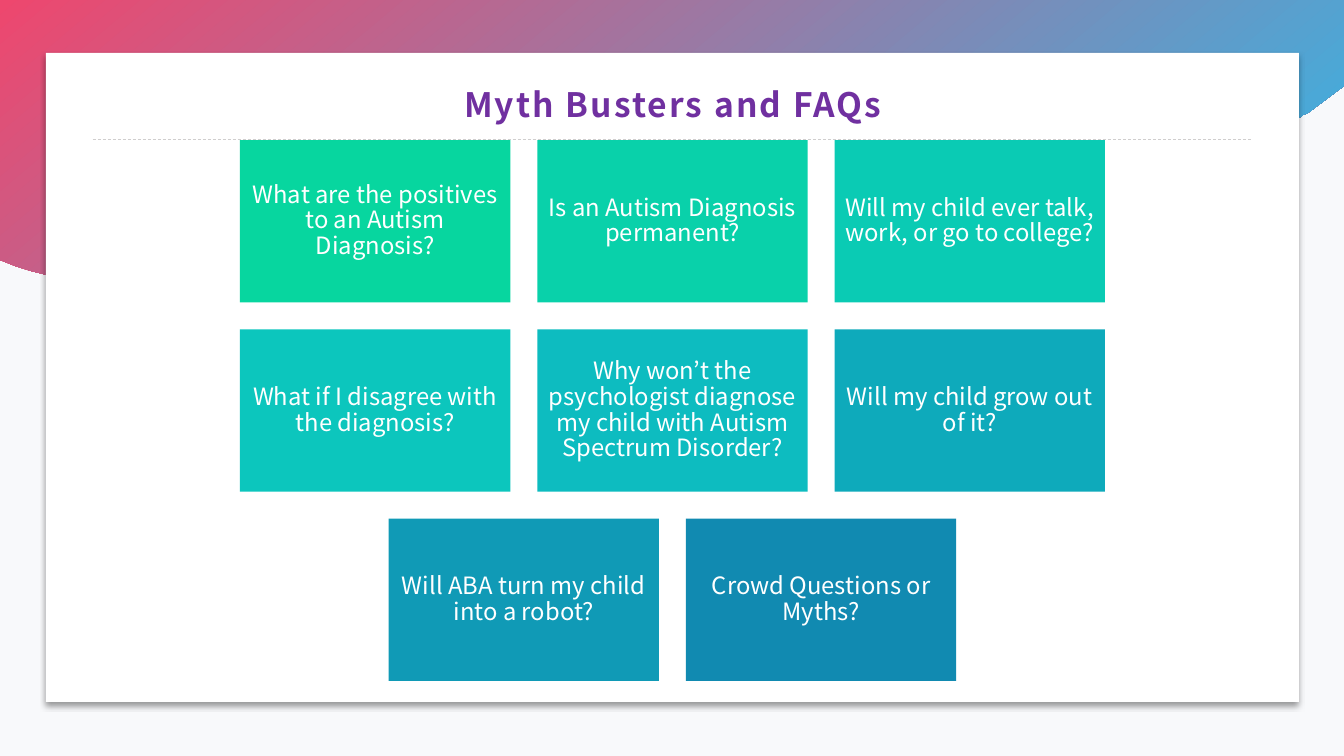
import pptx
import pptx.dml.color
import pptx.enum.dml
import pptx.enum.shapes
import pptx.enum.text
import pptx.oxml
import pptx.oxml.ns
import pptx.util

PX = 914400 / 100.8


class Theme:
    """Colours, font and type sizes of the slide."""
    font = "Noto Sans CJK JP"
    title_size, tile_size = 24, 17
    background, card, rule = "F8F9FB", "FFFFFF", "D0CECE"
    wave = ("EE476E", "2DBAEA")
    title, tile_text = "7030A0", "FFFFFF"


QUESTION_ROWS = [
    [("What are the positives to an Autism Diagnosis?", "07D69F"),
     ("Is an Autism Diagnosis permanent?", "09D1AA"),
     ("Will my child ever talk, work, or go to college?", "0ACBB4")],
    [("What if I disagree with the diagnosis?", "0CC6BD"),
     ("Why won’t the psychologist diagnose my child with Autism Spectrum Disorder?", "0DBCC0"),
     ("Will my child grow out of it?", "0EAABB")],
    [("Will ABA turn my child into a robot?", "109AB6"),
     ("Crowd Questions or Myths?", "118AB1")],
]


def px(n):
    """Turn pixels into EMU."""
    return pptx.util.Emu(round(n * PX))


def rgb(code):
    """Turn a hex code into a colour."""
    return pptx.dml.color.RGBColor.from_string(code)


def write_text(sp, text, size, color, bold=False):
    """Set one centred paragraph in a shape and return its run."""
    tf = sp.text_frame
    tf.text = text
    tf.word_wrap = True
    tf.auto_size = pptx.enum.text.MSO_AUTO_SIZE.NONE
    tf.vertical_anchor = pptx.enum.text.MSO_ANCHOR.MIDDLE
    p = tf.paragraphs[0]
    p.alignment = pptx.enum.text.PP_ALIGN.CENTER
    p.line_spacing = 0.9
    r = p.runs[0]
    r.font.name, r.font.size, r.font.bold = Theme.font, pptx.util.Pt(size), bold
    r.font.color.rgb = rgb(color)
    return r


def add_box(slide, box, color):
    """Add a plain filled rectangle."""
    sp = slide.shapes.add_shape(pptx.enum.shapes.MSO_SHAPE.RECTANGLE, *map(px, box))
    sp.shadow.inherit = False
    sp.fill.solid()
    sp.fill.fore_color.rgb = rgb(color)
    sp.line.fill.background()
    return sp


def curve(points, steps=24):
    """Sample a cubic curve given by its four control points."""
    for i in range(1, steps + 1):
        t = i / steps
        weights = ((1 - t) ** 3, 3 * t * (1 - t) ** 2, 3 * t * t * (1 - t), t ** 3)
        yield tuple(round(sum(w * pt[k] for w, pt in zip(weights, points)), 2) for k in (0, 1))


def add_wave(slide, left, top, width):
    """Draw the gradient wave along the top edge."""
    edge = [(0, 260), (123, 306), (268, 313), (396, 276), (534, 237), (653, 152), (798, 137),
            (944, 122), (1097, 181), (1237, 143), (1277, 132), (1314, 112), (width, 86)]
    outline = [edge[0]]
    for i in range(0, len(edge) - 1, 3):
        outline += curve(edge[i:i + 4])
    builder = slide.shapes.build_freeform(0, 0, scale=PX)
    builder.add_line_segments(outline + [(width, 0)], close=True)
    sp = builder.convert_to_shape(px(left), px(top))
    sp.shadow.inherit = False
    sp.line.fill.background()
    sp.fill.gradient()
    sp.fill.gradient_angle = 310
    for stop, color, position in zip(sp.fill.gradient_stops, Theme.wave, (0, 1)):
        stop.color.rgb = rgb(color)
        stop.position = position


def add_card(slide, box):
    """Draw the white card with its soft shadow."""
    sp = add_box(slide, box, Theme.card)
    effects = sp._element.spPr.find(pptx.oxml.ns.qn("a:effectLst"))
    effects.append(pptx.oxml.parse_xml(
        f'<a:outerShdw {pptx.oxml.ns.nsdecls("a")} blurRad="50800" dist="38100" dir="5400000"'
        ' algn="t" rotWithShape="0"><a:srgbClr val="000000"><a:alpha val="40000"/>'
        '</a:srgbClr></a:outerShdw>'))


def add_heading(slide, left, top, width, height):
    """Place the title and the dashed rule under it."""
    bottom = top + height
    line = slide.shapes.add_connector(pptx.enum.shapes.MSO_CONNECTOR.STRAIGHT,
                                      px(left), px(bottom), px(left + width), px(bottom))
    line.line.color.rgb = rgb(Theme.rule)
    line.line.width = pptx.util.Pt(0.5)
    line.line.dash_style = pptx.enum.dml.MSO_LINE.DASH
    line._element.spPr.append(pptx.oxml.parse_xml(
        f'<a:effectLst {pptx.oxml.ns.nsdecls("a")}/>'))
    title = slide.shapes.title
    title.left, title.top, title.width, title.height = map(px, (left, top, width, height))
    r = write_text(title, "Myth Busters and FAQs", Theme.title_size, Theme.title, bold=True)
    r.font._element.set("spc", "150")
    slide.shapes._spTree.append(title._element)


def add_questions(slide, left, top, width, height):
    """Lay out the question tiles in centred rows."""
    gap, columns, inset = 27, 3, px(7)
    tile_w = (width - gap * (columns - 1)) / columns
    tile_h = (height - gap * (len(QUESTION_ROWS) - 1)) / len(QUESTION_ROWS)
    for i, row in enumerate(QUESTION_ROWS):
        row_w = len(row) * (tile_w + gap) - gap
        for j, (text, color) in enumerate(row):
            x = left + (width - row_w) / 2 + j * (tile_w + gap)
            sp = add_box(slide, (x, top + i * (tile_h + gap), tile_w, tile_h), color)
            tf = sp.text_frame
            tf.margin_left = tf.margin_right = tf.margin_top = tf.margin_bottom = inset
            write_text(sp, text, Theme.tile_size, Theme.tile_text)


def main():
    """Build and save the slide."""
    prs = pptx.Presentation()
    prs.slide_width, prs.slide_height = px(1344), px(756)
    slide = prs.slides.add_slide(prs.slide_layouts[5])
    slide.background.fill.solid()
    slide.background.fill.fore_color.rgb = rgb(Theme.background)
    add_wave(slide, 0, 0, 1344)
    add_card(slide, (46, 53, 1253, 649))
    add_heading(slide, 93, 75, 1160, 64)
    add_questions(slide, 240, 140, 865, 541)
    prs.save("out.pptx")


if __name__ == "__main__":
    main()
